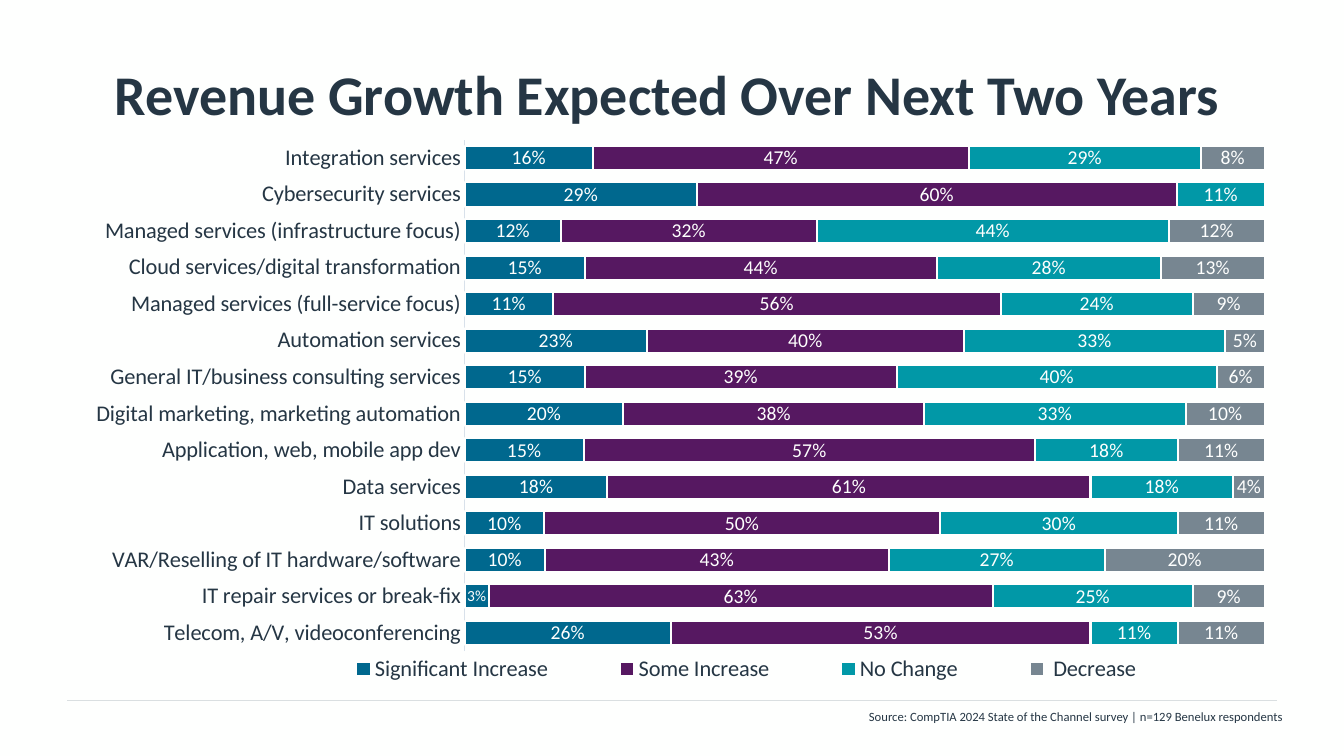
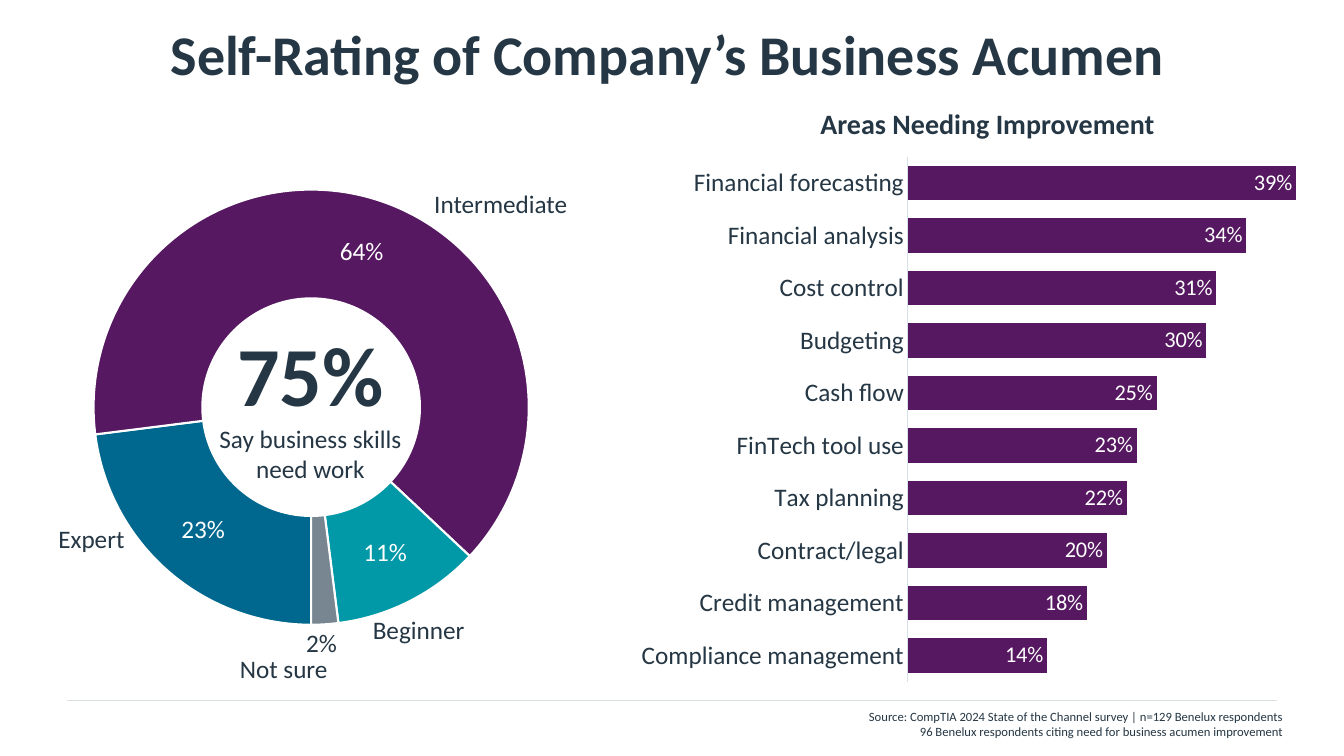
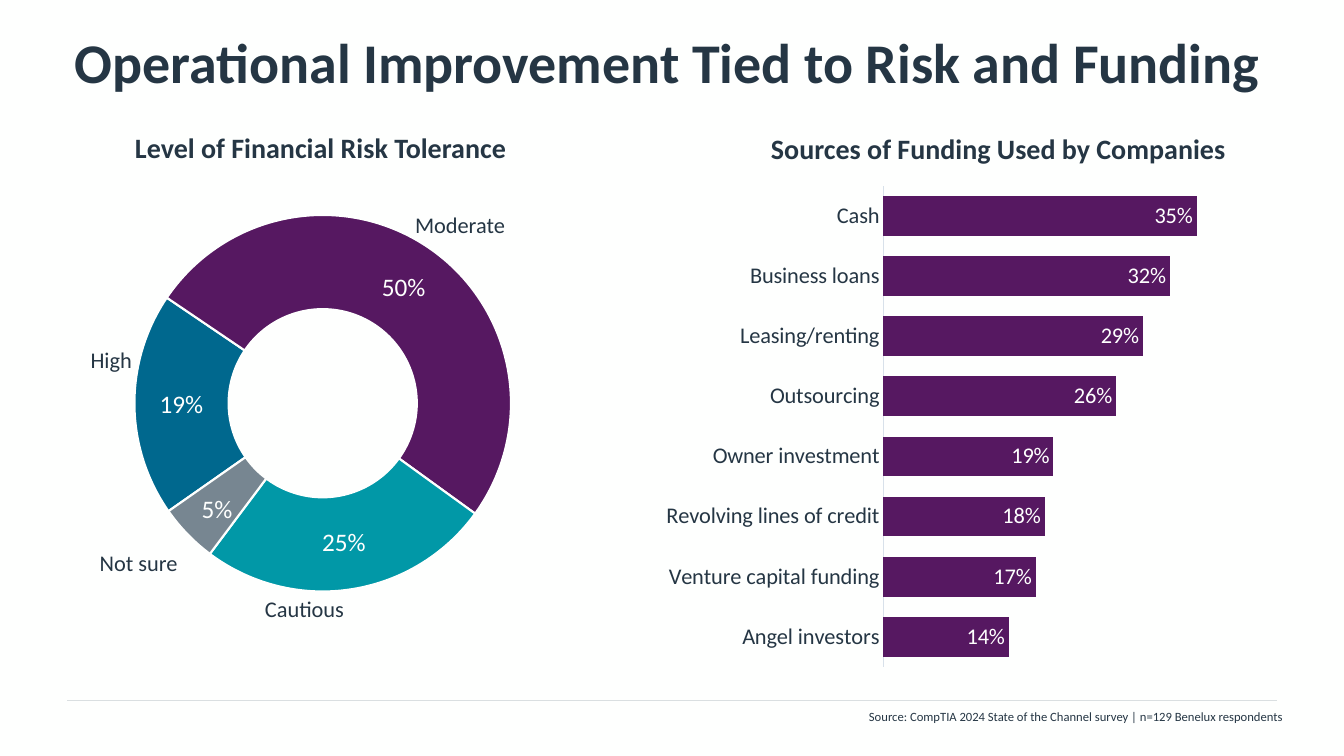
from dataclasses import dataclass

from lxml import etree
from pptx import Presentation
from pptx import util as u
from pptx.chart import data
from pptx.dml import color
from pptx.enum import chart as ch
from pptx.enum import shapes, text
from pptx.oxml import ns


@dataclass(frozen=True)
class Theme:
    font: str = "Calibri"
    paper: str = "FEFFFE"
    ink: str = "253644"
    rule: str = "DADFE1"
    axis: str = "D8E1EA"
    blue: str = "00688E"
    plum: str = "561861"
    teal: str = "0198A7"
    grey: str = "778691"
    title: int = 40
    figure: int = 60
    heading: int = 20
    large: int = 18
    body: int = 16
    value: int = 14
    tight: int = 11
    chart: int = 10
    source: int = 9

    @property
    def palette(self):
        return self.blue, self.plum, self.teal, self.grey


THEME = Theme()
SURVEY = "Source: CompTIA 2024 State of the Channel survey | n=129 Benelux respondents"
GROWTH = [
    ("Telecom, A/V, videoconferencing", 0.26, 0.53, 0.11, 0.11),
    ("IT repair services or break-fix", 0.03, 0.63, 0.25, 0.09),
    ("VAR/Reselling of IT hardware/software", 0.10, 0.43, 0.27, 0.20),
    ("IT solutions", 0.10, 0.50, 0.30, 0.11),
    ("Data services", 0.18, 0.61, 0.18, 0.04),
    ("Application, web, mobile app dev", 0.15, 0.57, 0.18, 0.11),
    ("Digital marketing, marketing automation", 0.20, 0.38, 0.33, 0.10),
    ("General IT/business consulting services", 0.15, 0.39, 0.40, 0.06),
    ("Automation services", 0.23, 0.40, 0.33, 0.05),
    ("Managed services (full-service focus)", 0.11, 0.56, 0.24, 0.09),
    ("Cloud services/digital transformation", 0.15, 0.44, 0.28, 0.13),
    ("Managed services (infrastructure focus)", 0.12, 0.32, 0.44, 0.12),
    ("Cybersecurity services", 0.29, 0.60, 0.11, 0),
    ("Integration services", 0.16, 0.47, 0.29, 0.08),
]
OUTLOOKS = ("Significant Increase", "Some Increase", "No Change", " Decrease")
IMPROVEMENTS = [
    ("Compliance management", 0.14), ("Credit management", 0.18),
    ("Contract/legal", 0.20), ("Tax planning", 0.22),
    ("FinTech tool use", 0.23), ("Cash flow", 0.25), ("Budgeting", 0.30),
    ("Cost control", 0.31), ("Financial analysis", 0.34),
    ("Financial forecasting", 0.39),
]
FUNDING = [
    ("Angel investors", 0.14), ("Venture capital funding", 0.17),
    ("Revolving lines of credit", 0.18), ("Owner investment", 0.19),
    ("Outsourcing", 0.26), ("Leasing/renting", 0.29),
    ("Business loans", 0.32), ("Cash", 0.35),
]


def rgb(value):
    return color.RGBColor.from_string(value)


def points(*lengths):
    return [u.Pt(length) for length in lengths]


def style_font(font, size, tint=THEME.ink, bold=False):
    font.name, font.size, font.bold = THEME.font, u.Pt(size), bold
    font.color.rgb = rgb(tint)


def fill_with(form, tint, outlined=True):
    form.fill.solid()
    form.fill.fore_color.rgb = rgb(tint)
    if outlined:
        form.line.color.rgb = rgb(THEME.paper)
        form.line.width = u.Pt(1.5)


def add_run(paragraph, words, size, bold=False):
    run = paragraph.add_run()
    run.text = words
    style_font(run.font, size, bold=bold)


def add_text(slide, box, lines, align=text.PP_ALIGN.LEFT, wrap=False):
    frame = slide.shapes.add_textbox(*points(*box)).text_frame
    frame.word_wrap = wrap
    frame.auto_size = text.MSO_AUTO_SIZE.SHAPE_TO_FIT_TEXT
    for index, (words, size, bold) in enumerate(lines):
        paragraph = frame.add_paragraph() if index else frame.paragraphs[0]
        paragraph.alignment = align
        add_run(paragraph, words, size, bold)


def add_heading(slide, left, top, width, words):
    add_text(slide, (left, top, width, 31.7), [(words, THEME.heading, True)])


def add_slice_names(slide, size, names):
    for words, left, top, width in names:
        add_text(slide, (left, top, width, size * 1.6), [(words, size, False)])


def add_page(deck, title, title_top, sources):
    slide = deck.slides.add_slide(deck.slide_layouts[5])
    heading = slide.shapes.title
    heading.left, heading.top, heading.width, heading.height = points(48.2, title_top, 864, 90)
    frame = heading.text_frame
    frame.margin_left = 0
    frame.word_wrap = True
    frame.auto_size = text.MSO_AUTO_SIZE.NONE
    frame.vertical_anchor = text.MSO_ANCHOR.MIDDLE
    frame.paragraphs[0].alignment = text.PP_ALIGN.CENTER
    add_run(frame.paragraphs[0], title, THEME.title, True)

    footer_rule = slide.shapes.add_connector(
        shapes.MSO_CONNECTOR.STRAIGHT, *points(48.2, 500.4, 912.2, 500.4))
    footer_rule.line.color.rgb = rgb(THEME.rule)
    footer_rule.line.width = u.Pt(0.5)
    etree.SubElement(footer_rule.element.spPr, ns.qn("a:effectLst"))
    add_text(slide, (455.8, 502.6, 467.3, 7.2 + 10.8 * len(sources)),
             [(line, THEME.source, False) for line in sources],
             text.PP_ALIGN.RIGHT, True)
    return slide


def manual_layout(**settings):
    layout = etree.Element(ns.qn("c:layout"))
    manual = etree.SubElement(layout, ns.qn("c:manualLayout"))
    for name, value in settings.items():
        etree.SubElement(manual, ns.qn(f"c:{name}")).set("val", str(value))
    return layout


def place_plot(chart, x, y, w, h):
    area = chart.element.xpath("c:chart/c:plotArea")[0]
    for default in area.xpath("c:layout"):
        area.remove(default)
    area.insert(0, manual_layout(layoutTarget="inner", xMode="edge", yMode="edge",
                                 x=x, y=y, w=w, h=h))


def place_legend(chart, x, y, w, h):
    chart.has_legend = True
    chart.legend.position = ch.XL_LEGEND_POSITION.BOTTOM
    chart.legend.include_in_layout = False
    style_font(chart.legend.font, THEME.body)
    legend = chart.element.xpath("c:chart/c:legend")[0]
    for default in legend.xpath("c:layout"):
        legend.remove(default)
    legend.xpath("c:legendPos")[0].addnext(
        manual_layout(xMode="edge", yMode="edge", x=x, y=y, w=w, h=h))


def add_chart(slide, kind, box, categories, series, plot_box):
    figures = data.CategoryChartData(number_format="0%")
    figures.categories = categories
    for name, values in series:
        figures.add_series(name, values)
    chart = slide.shapes.add_chart(kind, *points(*box), figures).chart
    chart.has_title = chart.has_legend = False
    style_font(chart.font, THEME.chart)
    place_plot(chart, *plot_box)
    return chart


def label_values(series, size, position=None):
    labels = series.data_labels
    labels.show_value = True
    labels.number_format, labels.number_format_is_linked = "0%", False
    style_font(labels.font, size, THEME.paper)
    if position is not None:
        labels.position = position


def point_label(chart, series_index, point_index, size, tint):
    label = chart.plots[0].series[series_index].points[point_index].data_label
    style_font(label.font, size, tint)
    return chart.element.xpath(
        f"//c:ser[c:idx/@val='{series_index}']//c:dLbl[c:idx/@val='{point_index}']")[0]


def hide_label(label):
    for part in label.xpath("*[not(self::c:idx)]"):
        label.remove(part)
    etree.SubElement(label, ns.qn("c:delete")).set("val", "1")


def style_bars(chart, category_size, top_value):
    plot = chart.plots[0]
    plot.gap_width = 51
    plot.vary_by_categories = False
    names = chart.category_axis
    names.major_tick_mark = names.minor_tick_mark = ch.XL_TICK_MARK.NONE
    names.has_major_gridlines = False
    names.format.line.color.rgb = rgb(THEME.axis)
    names.format.line.width = u.Pt(0.75)
    style_font(names.tick_labels.font, category_size)
    scale = chart.value_axis
    scale.minimum_scale, scale.maximum_scale = 0, top_value
    scale.has_major_gridlines = False
    scale.visible = False


def add_ranking(slide, box, rows, plot_box, category_size, top_value):
    categories, values = zip(*rows)
    chart = add_chart(slide, ch.XL_CHART_TYPE.BAR_CLUSTERED, box, categories,
                      [("Series 1", values)], plot_box)
    style_bars(chart, category_size, top_value)
    bars = chart.plots[0].series[0]
    fill_with(bars.format, THEME.plum, outlined=False)
    label_values(bars, THEME.body, ch.XL_LABEL_POSITION.INSIDE_END)


def add_ring(slide, box, values, start, last_tint, last_shift):
    chart = add_chart(slide, ch.XL_CHART_TYPE.DOUGHNUT, box, ["1", "2", "3", "4"],
                      [("Series 1", values)], (0.053, 0.035, 0.883, 0.883))
    ring = chart.plots[0].series[0]
    for index, tint in enumerate(THEME.palette):
        fill_with(ring.points[index].format, tint)
    label_values(ring, THEME.large)
    last = point_label(chart, 0, len(values) - 1, THEME.large, last_tint)
    x, y = last_shift
    last.xpath("c:idx")[0].addnext(manual_layout(x=x, y=y))
    for name, value in (("firstSliceAng", start), ("holeSize", 50)):
        chart.element.xpath(f"//c:{name}")[0].set("val", str(value))


def growth_slide(deck):
    slide = add_page(deck, "Revenue Growth Expected Over Next Two Years", 21.6, [SURVEY])
    services, *shares = zip(*GROWTH)
    chart = add_chart(slide, ch.XL_CHART_TYPE.BAR_STACKED_100, (48.2, 99.4, 889.9, 392.4),
                      services, zip(OUTLOOKS, shares), (0.319, 0, 0.655, 0.932))
    style_bars(chart, THEME.body, 1.02)
    for outlook, tint in zip(chart.plots[0].series, THEME.palette):
        fill_with(outlook.format, tint)
        label_values(outlook, THEME.value, ch.XL_LABEL_POSITION.CENTER)
    point_label(chart, 0, 1, THEME.tight, THEME.paper)
    hide_label(point_label(chart, 3, 12, THEME.value, THEME.paper))
    place_legend(chart, 0.18, 0.93, 0.73, 0.07)


def acumen_slide(deck):
    slide = add_page(deck, "Self-Rating of Company’s Business Acumen", -7.2,
                     [SURVEY, "96 Benelux respondents citing need for business acumen improvement"])
    add_ring(slide, (48.2, 123.1, 352.1, 352.1), (0.23, 0.64, 0.11, 0.02), 180,
             THEME.ink, (0, 0.15))
    add_text(slide, (140.4, 226.8, 162.7, 123.8),
             [("75%", THEME.figure, True),
              ("Say business skills need work", THEME.large, False)],
             text.PP_ALIGN.CENTER, True)
    add_ranking(slide, (433.4, 111.6, 517, 375.8), IMPROVEMENTS,
                (0.416, 0, 0.564, 1), THEME.large, 0.41)
    add_slice_names(slide, THEME.large, [
        ("Intermediate", 303.1, 131, 110.9), ("Expert", 34.6, 370.1, 61.9),
        ("Beginner", 259.2, 435.6, 80.6), ("Not sure", 164.2, 463, 77.8)])
    add_heading(slide, 578.9, 72.7, 255.6, "Areas Needing Improvement")


def funding_slide(deck):
    slide = add_page(deck, "Operational Improvement Tied to Risk and Funding", -1.4, [SURVEY])
    add_ring(slide, (79.9, 142.6, 304.6, 305.3), (0.19, 0.50, 0.25, 0.05), 235,
             THEME.paper, (-0.01, 0.02))
    add_slice_names(slide, THEME.body, [
        ("High", 57.6, 243.4, 44.6), ("Moderate", 289.4, 147.6, 79.9),
        ("Cautious", 182.2, 421.2, 72), ("Not sure", 64.1, 388.8, 71.3)])
    add_ranking(slide, (398.2, 132.5, 514.1, 344.2), FUNDING,
                (0.453, 0, 0.547, 1), THEME.body, 0.44)
    add_heading(slide, 543.6, 90.7, 342, "Sources of Funding Used by Companies")
    add_heading(slide, 89.3, 90, 282.2, "Level of Financial Risk Tolerance")


def main():
    deck = Presentation()
    deck.slide_width, deck.slide_height = points(960, 540)
    backdrop = deck.slide_master.background.fill
    backdrop.solid()
    backdrop.fore_color.rgb = rgb(THEME.paper)
    growth_slide(deck)
    acumen_slide(deck)
    funding_slide(deck)
    deck.save("out.pptx")


if __name__ == "__main__":
    main()
